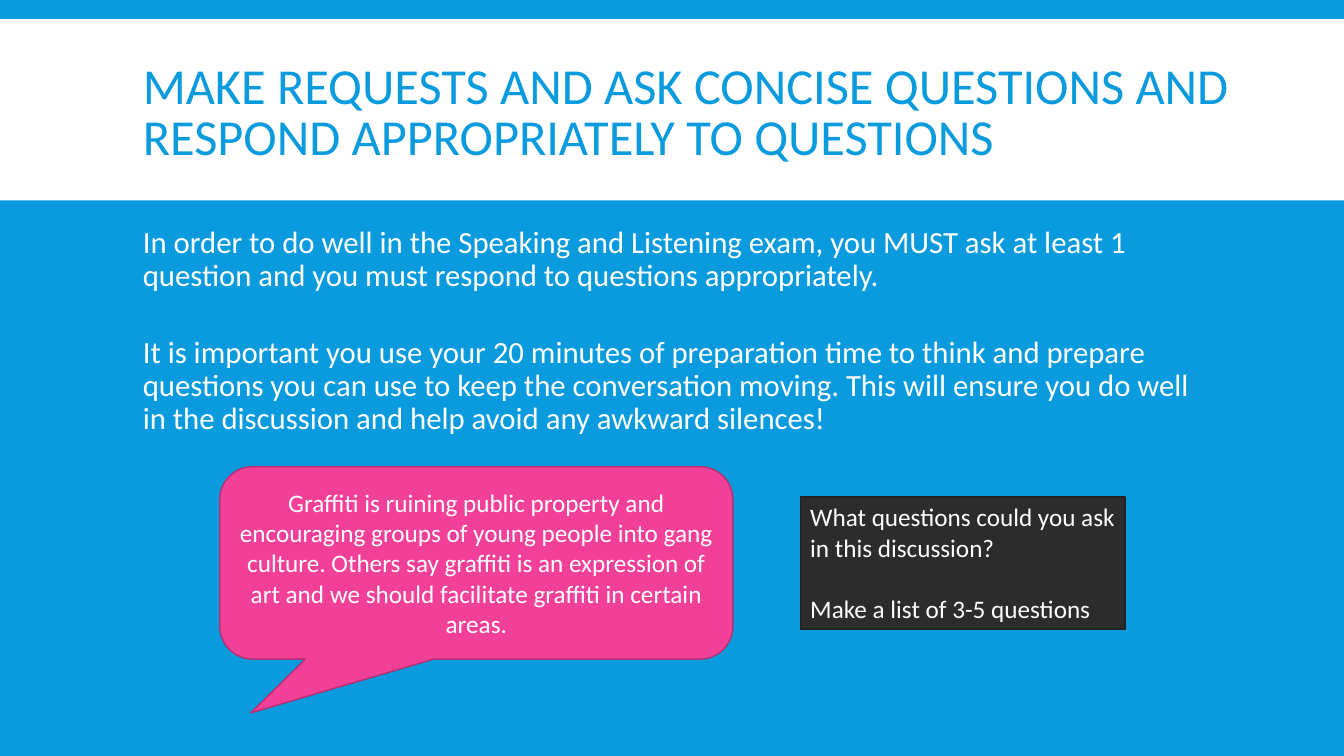
from pptx import Presentation
from pptx.dml.color import RGBColor
from pptx.enum.shapes import MSO_SHAPE as Preset
from pptx.enum.text import MSO_ANCHOR as Anchor, PP_ALIGN as Align
from pptx.util import Cm, Pt

COLOURS = {
    "sky": "099BDD",
    "white": "FFFFFF",
    "pink": "F24099",
    "pink_edge": "B32F71",
    "charcoal": "2C2C2C",
    "charcoal_edge": "212121",
}
WIDTH, HEIGHT = 33.87, 19.05


def colour(name):
    """Return the named colour."""
    return RGBColor.from_string(COLOURS[name])


def write(shape, *lines, size=18, tint="white", align=Align.LEFT,
          anchor=Anchor.TOP, leading=1.0, gap=0):
    """Fill a shape with one paragraph per line, separated by gap points."""
    frame = shape.text_frame
    frame.word_wrap = True
    frame.vertical_anchor = anchor
    for index, line in enumerate(lines):
        para = frame.add_paragraph() if index else frame.paragraphs[0]
        para.alignment = align
        para.line_spacing = leading
        para.space_before = Pt(gap if index else 0)
        span = para.add_run()
        span.text = line
        span.font.size = Pt(size)
        span.font.name = "Calibri"
        span.font.color.rgb = colour(tint)


def add_panel(page, box, preset, fill, edge=None):
    """Add a flat filled shape, outlined when an edge colour is given."""
    panel = page.shapes.add_shape(preset, *map(Cm, box))
    panel.shadow.inherit = False
    panel.fill.solid()
    panel.fill.fore_color.rgb = colour(fill)
    if edge:
        panel.line.color.rgb = colour(edge)
        panel.line.width = Pt(1)
    else:
        panel.line.fill.background()
    return panel


def add_header(page, box):
    """Place the white band and the slide title inside it."""
    left, top, width, height = box
    add_panel(page, box, Preset.RECTANGLE, "white")
    title = page.shapes.add_textbox(
        Cm(left + 3.35), Cm(top + 0.31), Cm(width - 5.35), Cm(height - 0.38))
    write(title,
          "MAKE REQUESTS AND ASK CONCISE QUESTIONS AND RESPOND APPROPRIATELY "
          "TO QUESTIONS",
          size=36, tint="sky", anchor=Anchor.MIDDLE, leading=0.85)


def add_advice(page, box):
    """Place the two paragraphs of exam advice."""
    advice = page.shapes.add_textbox(*map(Cm, box))
    write(advice,
          "In order to do well in the Speaking and Listening exam, you MUST "
          "ask at least 1 question and you must respond to questions "
          "appropriately.",
          "It is important you use your 20 minutes of preparation time to "
          "think and prepare questions you can use to keep the conversation "
          "moving. This will ensure you do well in the discussion and help "
          "avoid any awkward silences!",
          size=22, leading=0.9, gap=31)


def add_activity(page, box):
    """Place the discussion callout and the task box beside it."""
    left, top, width, height = box
    callout = add_panel(page, (left, top, 12.93, height),
                        Preset.ROUNDED_RECTANGULAR_CALLOUT, "pink", "pink_edge")
    for index, value in enumerate((-0.44, 0.78, 0.17)):
        callout.adjustments[index] = value
    write(callout,
          "Graffiti is ruining public property and encouraging groups of "
          "young people into gang culture. Others say graffiti is an "
          "expression of art and we should facilitate graffiti in certain "
          "areas.",
          align=Align.CENTER, anchor=Anchor.MIDDLE)
    task_width, task_height = 8.18, 3.33
    task = add_panel(page,
                     (left + width - task_width, top + (height - task_height) / 2,
                      task_width, task_height),
                     Preset.RECTANGLE, "charcoal", "charcoal_edge")
    write(task, "What questions could you ask in this discussion?",
          "Make a list of 3-5 questions", gap=22)


def main():
    """Build the slide and save the deck."""
    deck = Presentation()
    deck.slide_width, deck.slide_height = Cm(WIDTH), Cm(HEIGHT)
    page = deck.slides.add_slide(deck.slide_layouts[6])
    page.background.fill.solid()
    page.background.fill.fore_color.rgb = colour("sky")
    add_header(page, (0, 0.48, WIDTH, 4.57))
    add_advice(page, (3.35, 5.59, 27.18, 11.68))
    add_activity(page, (5.54, 11.76, 22.81, 4.85))
    deck.save("out.pptx")


if __name__ == "__main__":
    main()
